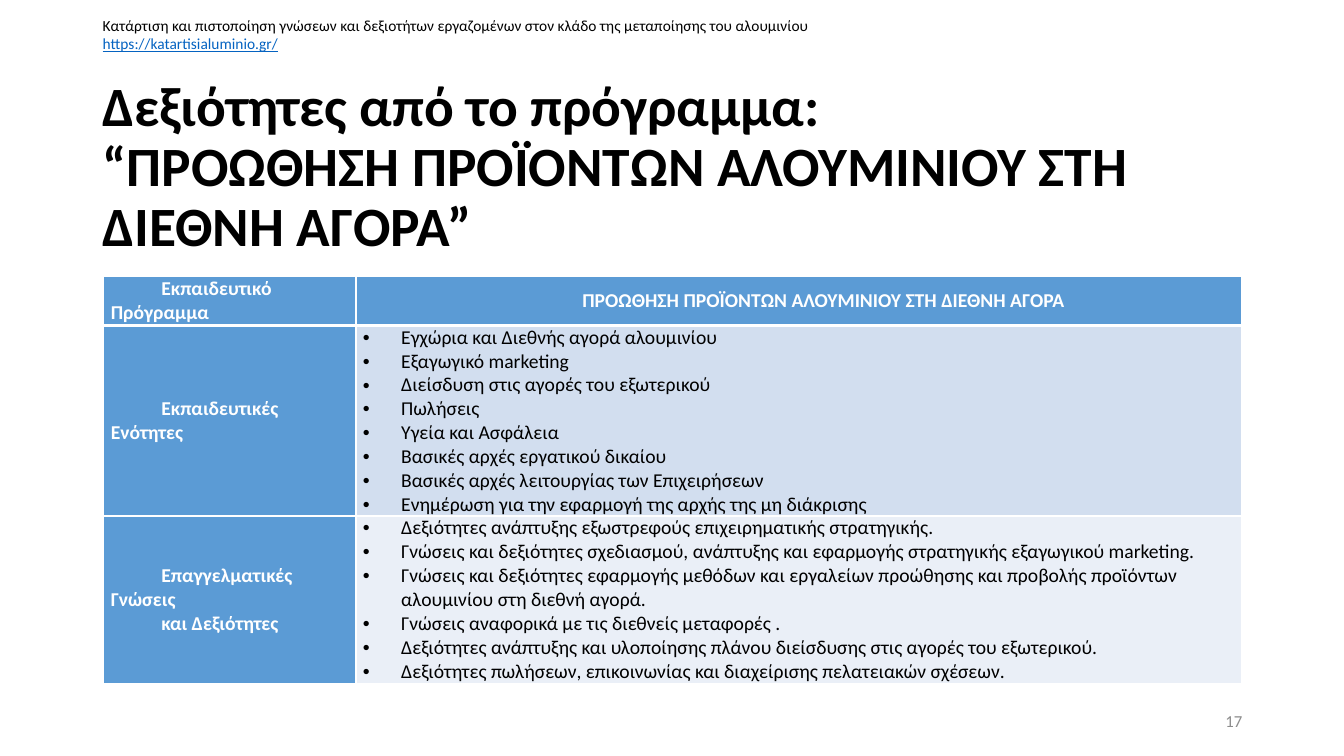
from lxml import etree
from pptx import Presentation
from pptx.dml.color import RGBColor
from pptx.enum.text import MSO_ANCHOR, PP_ALIGN
from pptx.oxml.ns import qn
from pptx.util import Inches, Pt

LEFT, CENTER, RIGHT = PP_ALIGN.LEFT, PP_ALIGN.CENTER, PP_ALIGN.RIGHT
MIDDLE, TOP = MSO_ANCHOR.MIDDLE, MSO_ANCHOR.TOP
FONT = "Calibri"
BLACK, WHITE, GREY, LINK, BLUE = "000000", "FFFFFF", "8C8C8C", "0563C1", "5B9BD5"

HEADER = [
    "Κατάρτιση και πιστοποίηση γνώσεων και δεξιοτήτων εργαζομένων στον κλάδο της μεταποίησης του αλουμινίου",
    "https://katartisialuminio.gr/",
]
TITLE = ["Δεξιότητες από το πρόγραμμα: \v“ΠΡΟΩΘΗΣΗ ΠΡΟΪΟΝΤΩΝ ΑΛΟΥΜΙΝΙΟΥ ΣΤΗ ΔΙΕΘΝΗ ΑΓΟΡΑ”"]
NUMBER = ["17"]

# Each row: height, fill of the right cell, left lines, right lines
ROWS = [
    (0.49, BLUE, ["Εκπαιδευτικό Πρόγραμμα"],
     ["ΠΡΟΩΘΗΣΗ ΠΡΟΪΟΝΤΩΝ ΑΛΟΥΜΙΝΙΟΥ ΣΤΗ ΔΙΕΘΝΗ ΑΓΟΡΑ"]),
    (1.89, "D2DEEF", ["Εκπαιδευτικές Ενότητες"], [
        "Εγχώρια και Διεθνής αγορά αλουμινίου",
        "Εξαγωγικό marketing",
        "Διείσδυση στις αγορές του εξωτερικού",
        "Πωλήσεις",
        "Υγεία και Ασφάλεια",
        "Βασικές αρχές εργατικού δικαίου",
        "Βασικές αρχές λειτουργίας των Επιχειρήσεων",
        "Ενημέρωση για την εφαρμογή της αρχής της μη διάκρισης",
    ]),
    (1.66, "EAEFF7", ["Επαγγελματικές Γνώσεις", "και Δεξιότητες"], [
        "Δεξιότητες ανάπτυξης εξωστρεφούς επιχειρηματικής στρατηγικής.",
        "Γνώσεις και δεξιότητες σχεδιασμού, ανάπτυξης και εφαρμογής στρατηγικής εξαγωγικού marketing.",
        "Γνώσεις και δεξιότητες εφαρμογής μεθόδων και εργαλείων προώθησης και προβολής "
        "προϊόντων αλουμινίου στη διεθνή αγορά.",
        "Γνώσεις αναφορικά με τις διεθνείς μεταφορές .",
        "Δεξιότητες ανάπτυξης και υλοποίησης πλάνου διείσδυσης στις αγορές του εξωτερικού.",
        "Δεξιότητες πωλήσεων, επικοινωνίας και διαχείρισης πελατειακών σχέσεων.",
    ]),
]
COLS = [2.5, 8.78]


def rgb(color):
    return RGBColor.from_string(color)


def write(frame, lines, size, color, bold=False, align=LEFT):
    frame.text = "\n".join(lines)
    frame.word_wrap = True
    for para in frame.paragraphs:
        para.alignment = align
        for run in para.runs:
            font = run.font
            font.name, font.size, font.bold = FONT, Pt(size), bold
            font.color.rgb = rgb(color)


def add_text(slide, place, lines, size, color, bold=False, align=LEFT, anchor=MIDDLE):
    frame = slide.shapes.add_textbox(*map(Inches, place)).text_frame
    write(frame, lines, size, color, bold, align)
    frame.vertical_anchor = anchor
    return frame


def indent(para, margin, first, mark=None):
    props = para._p.get_or_add_pPr()
    props.set("marL", str(Inches(margin)))
    props.set("indent", str(Inches(first)))
    if mark:
        etree.SubElement(props, qn("a:buFont"), typeface="Arial")
        etree.SubElement(props, qn("a:buChar"), char=mark)


def border(cell, widths):
    props = cell._tc.get_or_add_tcPr()
    for side, width in zip("LRTB", widths):
        line = etree.SubElement(props, qn("a:ln" + side), w=str(Pt(width)))
        fill = etree.SubElement(line, qn("a:solidFill"))
        etree.SubElement(fill, qn("a:srgbClr"), val=WHITE)


def fill_cell(cell, lines, color, row, bullets):
    border(cell, (1, 1, 3 if row == 1 else 1, 3 if row == 0 else 1))
    cell.fill.solid()
    cell.fill.fore_color.rgb = rgb(color)
    cell.vertical_anchor = MIDDLE
    cell.margin_left = cell.margin_right = Inches(0.07)
    cell.margin_top = cell.margin_bottom = 0
    write(cell.text_frame, lines, 14, BLACK if bullets else WHITE, not bullets)
    for para in cell.text_frame.paragraphs:
        if bullets:
            indent(para, 0.38, -0.38, "•")
        else:
            indent(para, 0, 0.5)


def add_grid(slide):
    heights = [row[0] for row in ROWS]
    place = map(Inches, (1.03, 2.74, sum(COLS), sum(heights)))
    table = slide.shapes.add_table(len(ROWS), len(COLS), *place).table
    for col, width in zip(table.columns, COLS):
        col.width = Inches(width)
    for r, (height, tint, left, right) in enumerate(ROWS):
        table.rows[r].height = Inches(height)
        fill_cell(table.cell(r, 0), left, BLUE, r, False)
        fill_cell(table.cell(r, 1), right, tint, r, r > 0)
    table.cell(0, 1).text_frame.paragraphs[0].alignment = CENTER


def main():
    deck = Presentation()
    deck.slide_width, deck.slide_height = Inches(13.33), Inches(7.5)
    slide = deck.slides.add_slide(deck.slide_layouts[6])

    head = add_text(slide, (0.92, 0.11, 9.72, 0.47), HEADER, 11, BLACK, anchor=TOP)
    link = head.paragraphs[1].runs[0].font
    link.color.rgb, link.underline = rgb(LINK), True

    title = add_text(slide, (0.92, 0.95, 11.5, 1.45), TITLE, 39.6, BLACK, bold=True)
    title.paragraphs[0].line_spacing = 0.9

    add_text(slide, (9.42, 6.95, 3, 0.4), NUMBER, 12, GREY, align=RIGHT)
    add_grid(slide)
    deck.save("out.pptx")


if __name__ == "__main__":
    main()
